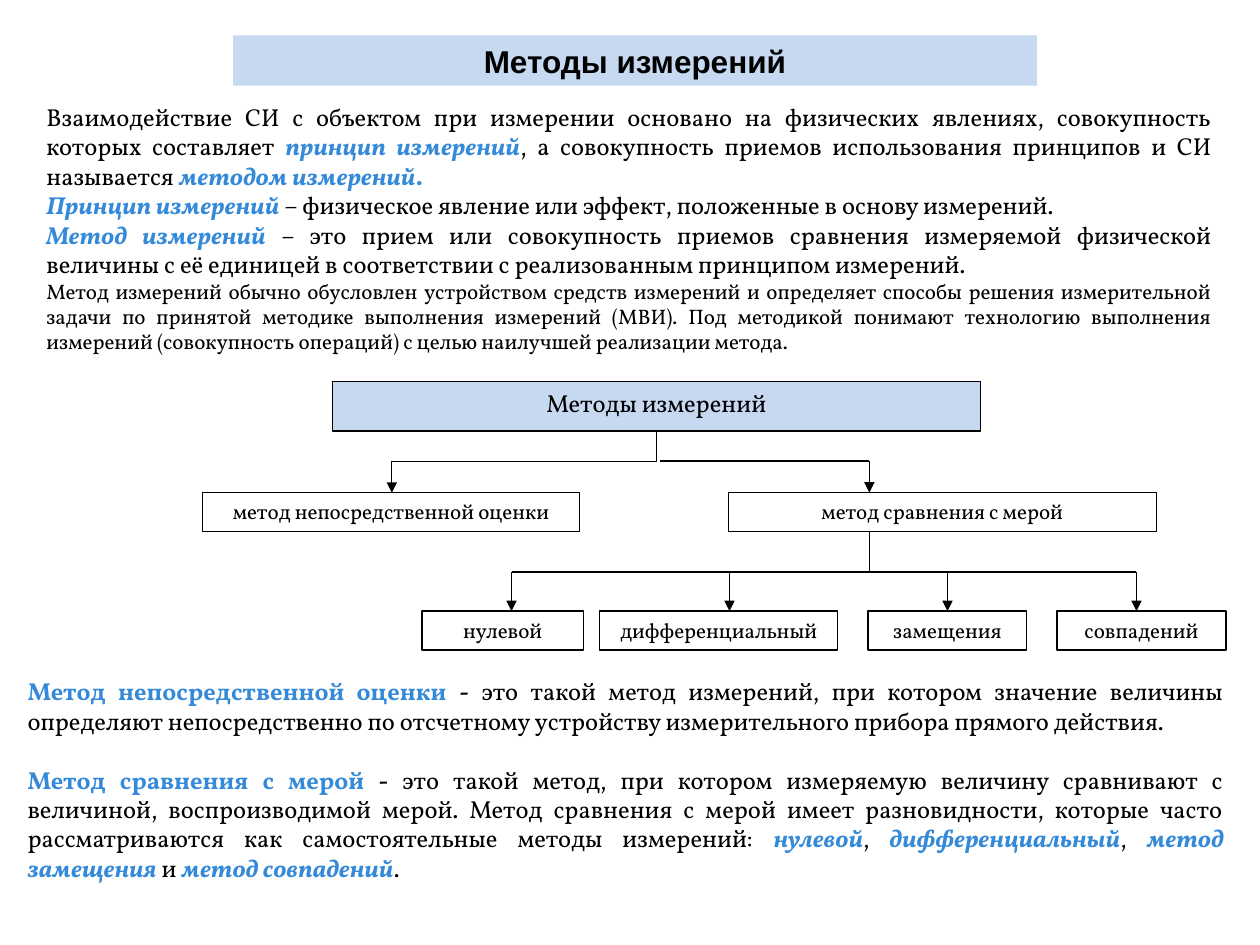
"""Build a slide on measurement methods: definitions, a tree of methods and explanations."""
from lxml.etree import SubElement
from pptx import Presentation
from pptx.dml.color import RGBColor
from pptx.enum.shapes import MSO_CONNECTOR, MSO_SHAPE
from pptx.enum.text import MSO_ANCHOR, PP_ALIGN
from pptx.oxml.ns import qn
from pptx.util import Inches, Pt

BLACK = RGBColor(0x00, 0x00, 0x00)
WHITE = RGBColor(0xFF, 0xFF, 0xFF)
BLUE = RGBColor(0x34, 0x8A, 0xD8)
PALE = RGBColor(0xC6, 0xD9, 0xF1)
FONT = "Vollkorn"

PLAIN = (BLACK, False, False)
DARK = (BLACK, True, False)
TERM = (BLUE, True, False)
ACCENT = (BLUE, True, True)

TITLE = "Методы измерений"
DEFINITIONS = [
    (14, [("Взаимодействие СИ с объектом при измерении основано на физических явлениях, "
           "совокупность которых составляет ", PLAIN),
          ("принцип измерений", ACCENT),
          (", а совокупность приемов использования принципов и СИ называется ", PLAIN),
          ("методом измерений", ACCENT), (".", TERM)]),
    (14, [("Принцип измерений", ACCENT),
          (" – физическое явление или эффект, положенные в основу измерений.", PLAIN)]),
    (14, [("Метод измерений", ACCENT),
          (" – это прием или совокупность приемов сравнения измеряемой физической величины "
           "с её единицей в соответствии с реализованным принципом измерений.", PLAIN)]),
    (12, [("Метод измерений обычно обусловлен устройством средств измерений и определяет "
           "способы решения измерительной задачи по принятой методике выполнения измерений "
           "(МВИ). Под методикой понимают технологию выполнения измерений (совокупность "
           "операций) с целью наилучшей реализации метода.", PLAIN)]),
]
EXPLANATIONS = [
    (14, [("Метод непосредственной оценки", TERM), (" -", DARK),
          (" это такой метод измерений, при котором значение величины определяют "
           "непосредственно по отсчетному устройству измерительного прибора прямого "
           "действия.", PLAIN)]),
    (14, [("Метод сравнения с мерой", TERM), (" -", DARK),
          (" это такой метод, при котором измеряемую величину сравнивают с величиной, "
           "воспроизводимой мерой. Метод сравнения с мерой имеет разновидности, которые "
           "часто рассматриваются как самостоятельные методы измерений: ", PLAIN),
          ("нулевой", ACCENT), (", ", PLAIN), ("дифференциальный", ACCENT), (", ", PLAIN),
          ("метод замещения", ACCENT), (" и ", PLAIN), ("метод совпадений", ACCENT),
          (".", PLAIN)]),
]

ROOT_TOP, ROOT_H = 3.03, 0.39
BRANCH_TOP, LEAF_TOP, BOX_H = 3.91, 4.85, 0.31
BRANCH_BUS, LEAF_BUS = 3.66, 4.54
STEM_X = 6.9
LEAVES = [
    ("нулевой", 3.35, 1.28, 4.06),
    ("дифференциальный", 4.76, 1.89, 5.79),
    ("замещения", 6.89, 1.26, 7.52),
    ("совпадений", 8.39, 1.34, 9.02),
]


def add_text(s, left, top, width, height, paragraphs, gap=0):
    tf = s.shapes.add_textbox(*map(Inches, (left, top, width, height))).text_frame
    tf.word_wrap = True
    for i, (size, runs) in enumerate(paragraphs):
        p = tf.add_paragraph() if i else tf.paragraphs[0]
        p.alignment = PP_ALIGN.JUSTIFY
        p.font.name, p.font.size = FONT, Pt(size)
        if i:
            p.space_before = Pt(gap)
        for text, (color, bold, italic) in runs:
            r = p.add_run()
            r.text = text
            r.font.color.rgb, r.font.bold, r.font.italic = color, bold, italic


def add_box(s, text, left, top, width, height=BOX_H, fill=WHITE, size=12):
    sp = s.shapes.add_shape(MSO_SHAPE.RECTANGLE, *map(Inches, (left, top, width, height)))
    sp.shadow.inherit = False
    sp.fill.solid()
    sp.fill.fore_color.rgb = fill
    sp.line.color.rgb, sp.line.width = BLACK, Pt(0.75)
    tf = sp.text_frame
    tf.vertical_anchor = MSO_ANCHOR.TOP
    p = tf.paragraphs[0]
    p.text, p.alignment = text, PP_ALIGN.CENTER
    p.font.name, p.font.size, p.font.color.rgb = FONT, Pt(size), BLACK
    return sp


def add_line(s, x1, y1, x2, y2, arrow=False, kind=MSO_CONNECTOR.STRAIGHT):
    line = s.shapes.add_connector(kind, *map(Inches, (x1, y1, x2, y2)))
    line.line.color.rgb, line.line.width = BLACK, Pt(0.75)
    if arrow:
        SubElement(line.line._get_or_add_ln(), qn("a:tailEnd"), type="triangle")
    SubElement(line._element.spPr, qn("a:effectLst"))
    return line


def add_vertical_elbow(s, x1, y1, x2, y2):
    cx, cy = (x1 + x2) / 2, (y1 + y2) / 2
    half_w, half_h = (y2 - y1) / 2, (x1 - x2) / 2
    elbow = add_line(s, cx - half_w, cy - half_h, cx + half_w, cy + half_h,
                     True, MSO_CONNECTOR.ELBOW)
    elbow._element.spPr.find(qn("a:xfrm")).set("rot", "5400000")


def add_title(s):
    sp = s.shapes.title
    sp.left, sp.top, sp.width, sp.height = map(Inches, (1.85, 0.28, 6.38, 0.4))
    sp.fill.solid()
    sp.fill.fore_color.rgb = PALE
    sp.text_frame.vertical_anchor = MSO_ANCHOR.MIDDLE
    p = sp.text_frame.paragraphs[0]
    p.text, p.alignment = TITLE, PP_ALIGN.CENTER
    p.font.name, p.font.size, p.font.bold = "Arial", Pt(18), True
    p.font.color.rgb = BLACK


def add_tree(s):
    add_box(s, TITLE, 2.64, ROOT_TOP, 5.14, ROOT_H, PALE, 14)
    add_box(s, "метод непосредственной оценки", 1.61, BRANCH_TOP, 2.99)
    add_box(s, "метод сравнения с мерой", 5.78, BRANCH_TOP, 3.4)
    add_vertical_elbow(s, 5.21, ROOT_TOP + ROOT_H, 3.11, BRANCH_TOP)
    add_line(s, 5.24, BRANCH_BUS, STEM_X, BRANCH_BUS)
    add_line(s, STEM_X, BRANCH_BUS, STEM_X, BRANCH_TOP, True)
    add_line(s, STEM_X, BRANCH_TOP + BOX_H, STEM_X, LEAF_BUS)
    add_line(s, LEAVES[0][3], LEAF_BUS, LEAVES[-1][3], LEAF_BUS)
    for text, left, width, x in LEAVES:
        box = add_box(s, text, left, LEAF_TOP, width)
        arrow = add_line(s, x, LEAF_BUS, x, LEAF_TOP, True)
        if abs(left + width / 2 - x) < 0.01:
            arrow.end_connect(box, 0)


def main():
    prs = Presentation()
    prs.slide_width, prs.slide_height = Inches(10), Inches(7.5)
    s = prs.slides.add_slide(prs.slide_layouts[5])
    add_title(s)
    add_text(s, 0.27, 0.76, 9.45, 2.1, DEFINITIONS)
    add_tree(s)
    add_text(s, 0.12, 5.32, 9.69, 1.73, EXPLANATIONS, 16.75)
    prs.save("out.pptx")


if __name__ == "__main__":
    main()
